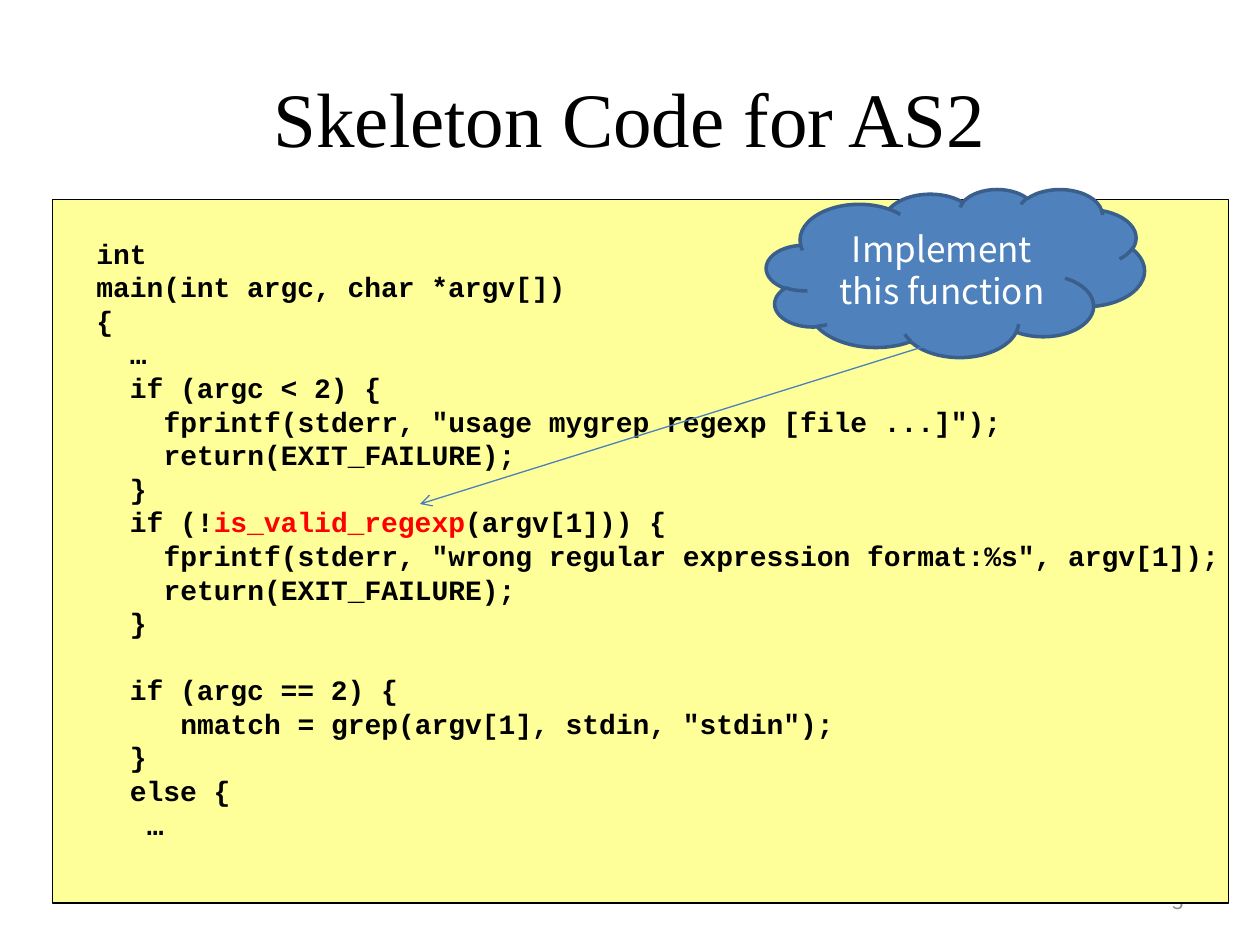
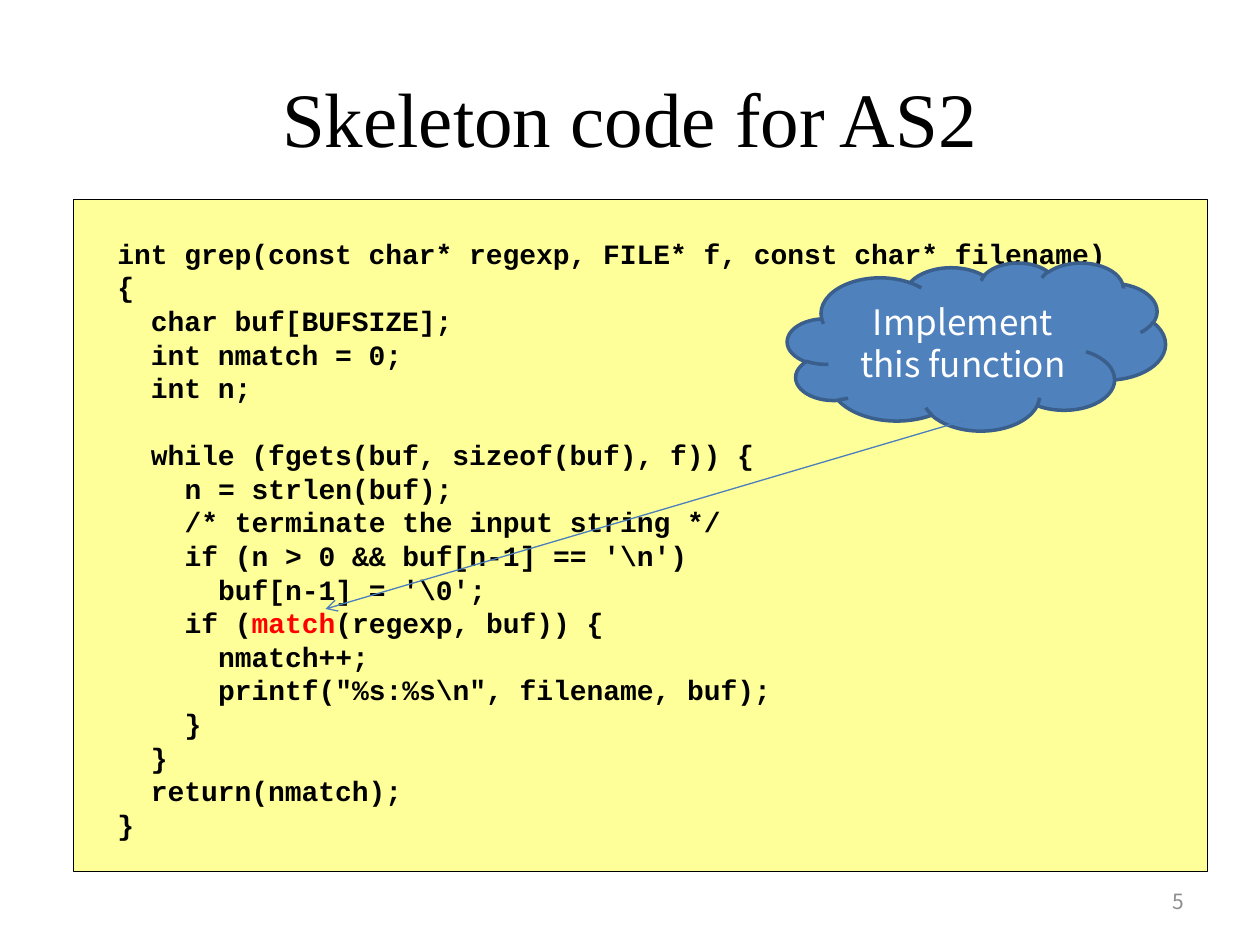
from dataclasses import dataclass

from lxml import etree
from pptx import Presentation
from pptx.dml.color import RGBColor
from pptx.enum.shapes import MSO_CONNECTOR, MSO_SHAPE
from pptx.enum.text import MSO_ANCHOR, PP_ALIGN
from pptx.oxml.ns import qn
from pptx.util import Pt

RECTANGLE, CLOUD = MSO_SHAPE.RECTANGLE, MSO_SHAPE.CLOUD
STRAIGHT = MSO_CONNECTOR.STRAIGHT
TOP, MIDDLE = MSO_ANCHOR.TOP, MSO_ANCHOR.MIDDLE
LEFT, CENTER, RIGHT = PP_ALIGN.LEFT, PP_ALIGN.CENTER, PP_ALIGN.RIGHT

BLACK = RGBColor(0x00, 0x00, 0x00)
WHITE = RGBColor(0xFF, 0xFF, 0xFF)
RED = RGBColor(0xFF, 0x00, 0x00)
GREY = RGBColor(0x8C, 0x8C, 0x8C)
YELLOW = RGBColor(0xFF, 0xFF, 0x99)
BLUE = RGBColor(0x4F, 0x81, 0xBD)
DARK_BLUE = RGBColor(0x3A, 0x5F, 0x8C)
ARROW_BLUE = RGBColor(0x4B, 0x7E, 0xBC)

TITLE_FONT, CODE_FONT, BODY_FONT = "Times New Roman", "Courier New", "Noto Sans CJK KR"

# Code grid: a 16 pt monospaced character is 0.6 em wide
CODE_SIZE = 16
CODE_CHAR = 9.6
CODE_LINE = 19.2
CODE_INDENT = 18
HIGHLIGHT = "|"  # encloses the function to be implemented

MAIN_CODE = r"""
int
main(int argc, char *argv[])
{
  …
  if (argc < 2) {
    fprintf(stderr, "usage mygrep regexp [file ...]");
    return(EXIT_FAILURE);
  }
  if (!|is_valid_regexp|(argv[1])) {
    fprintf(stderr, "wrong regular expression format:%s", argv[1]);
    return(EXIT_FAILURE);
  }

  if (argc == 2) {
     nmatch = grep(argv[1], stdin, "stdin");
  }
  else {
   …
"""

GREP_CODE = r"""
int grep(const char* regexp, FILE* f, const char* filename)
{
  char buf[BUFSIZE];
  int nmatch = 0;
  int n;

  while (fgets(buf, sizeof(buf), f)) {
    n = strlen(buf);
    /* terminate the input string */
    if (n > 0 && buf[n-1] == '\n')
      buf[n-1] = '\0';
    if (|match|(regexp, buf)) {
      nmatch++;
      printf("%s:%s\n", filename, buf);
    }
  }
  return(nmatch);
}
"""


@dataclass(frozen=True)
class Box:
    left: float
    top: float
    width: float
    height: float

    def lengths(self) -> tuple:
        return Pt(self.left), Pt(self.top), Pt(self.width), Pt(self.height)


@dataclass(frozen=True)
class CodePage:
    title: str
    number: str
    code: str
    panel: Box
    cloud: Box
    arrow_start: tuple[float, float]
    arrow_end: tuple[float, float]


TITLE_BOX = Box(36, 21.6, 648, 90)
NUMBER_BOX = Box(516, 500.4, 168, 28.8)

PAGES = [
    CodePage("Skeleton Code for AS2", "3", MAIN_CODE, Box(30, 114, 672, 402),
             Box(438, 108, 216, 96), (528, 198), (240, 288)),
    CodePage("Skeleton code for AS2", "5", GREP_CODE, Box(42, 114, 648, 384),
             Box(450, 150, 216, 96), (552, 240), (186, 348)),
]


def style_span(span, font: str, size: float, colour: RGBColor, bold: bool = False) -> None:
    span.font.name = font
    span.font.size = Pt(size)
    span.font.color.rgb = colour
    span.font.bold = bold


def write_label(shape, text: str, font: str, size: float, colour: RGBColor, align) -> None:
    frame = shape.text_frame
    frame.word_wrap = True
    frame.vertical_anchor = MIDDLE
    frame.text = text
    para = frame.paragraphs[0]
    para.alignment = align
    style_span(para.runs[0], font, size, colour)


def add_outlined_shape(page, kind, box: Box, fill: RGBColor, line: RGBColor, weight: float):
    shape = page.shapes.add_shape(kind, *box.lengths())
    shape.shadow.inherit = False
    shape.fill.solid()
    shape.fill.fore_color.rgb = fill
    shape.line.color.rgb = line
    shape.line.width = Pt(weight)
    return shape


def write_code(panel, code: str) -> None:
    frame = panel.text_frame
    frame.word_wrap = True
    frame.vertical_anchor = TOP
    frame.margin_left, frame.margin_right = Pt(7.2), Pt(0)
    frame.margin_top, frame.margin_bottom = Pt(21), Pt(3.6)
    para, gap = frame.paragraphs[0], 0
    for index, line in enumerate(code.strip().split("\n")):
        statement = line.lstrip()
        if not statement:
            gap += CODE_LINE
            continue
        if index:
            para = frame.add_paragraph()
        para.alignment = LEFT
        para.line_spacing = Pt(CODE_LINE)
        para.space_before, gap = Pt(gap), 0
        # Leading blanks become a paragraph indent
        indent = CODE_INDENT + CODE_CHAR * (len(line) - len(statement))
        properties = para._p.get_or_add_pPr()
        properties.set("marL", str(Pt(indent)))
        properties.set("indent", "0")
        for part, text in enumerate(statement.split(HIGHLIGHT)):
            span = para.add_run()
            span.text = text
            style_span(span, CODE_FONT, CODE_SIZE, RED if part % 2 else BLACK, bold=True)


def add_arrow(page, start: tuple[float, float], end: tuple[float, float]) -> None:
    arrow = page.shapes.add_connector(STRAIGHT, *map(Pt, start + end))
    arrow.line.color.rgb = ARROW_BLUE
    arrow.line.width = Pt(0.75)
    etree.SubElement(arrow.line._get_or_add_ln(), qn("a:tailEnd"), type="arrow")
    etree.SubElement(arrow._element.spPr, qn("a:effectLst"))


def build_page(deck, content: CodePage) -> None:
    page = deck.slides.add_slide(deck.slide_layouts[6])

    # Title and page number
    title = page.shapes.add_textbox(*TITLE_BOX.lengths())
    write_label(title, content.title, TITLE_FONT, 44, BLACK, CENTER)
    number = page.shapes.add_textbox(*NUMBER_BOX.lengths())
    write_label(number, content.number, BODY_FONT, 12, GREY, RIGHT)

    # Code panel
    panel = add_outlined_shape(page, RECTANGLE, content.panel, YELLOW, BLACK, 1)
    write_code(panel, content.code)

    # Cloud pointing at the highlighted function
    cloud = add_outlined_shape(page, CLOUD, content.cloud, BLUE, DARK_BLUE, 2)
    write_label(cloud, "Implement this function", BODY_FONT, 20, WHITE, CENTER)
    add_arrow(page, content.arrow_start, content.arrow_end)


def main() -> None:
    deck = Presentation()
    deck.slide_width, deck.slide_height = Pt(720), Pt(540)
    for content in PAGES:
        build_page(deck, content)
    deck.save("out.pptx")


if __name__ == "__main__":
    main()
